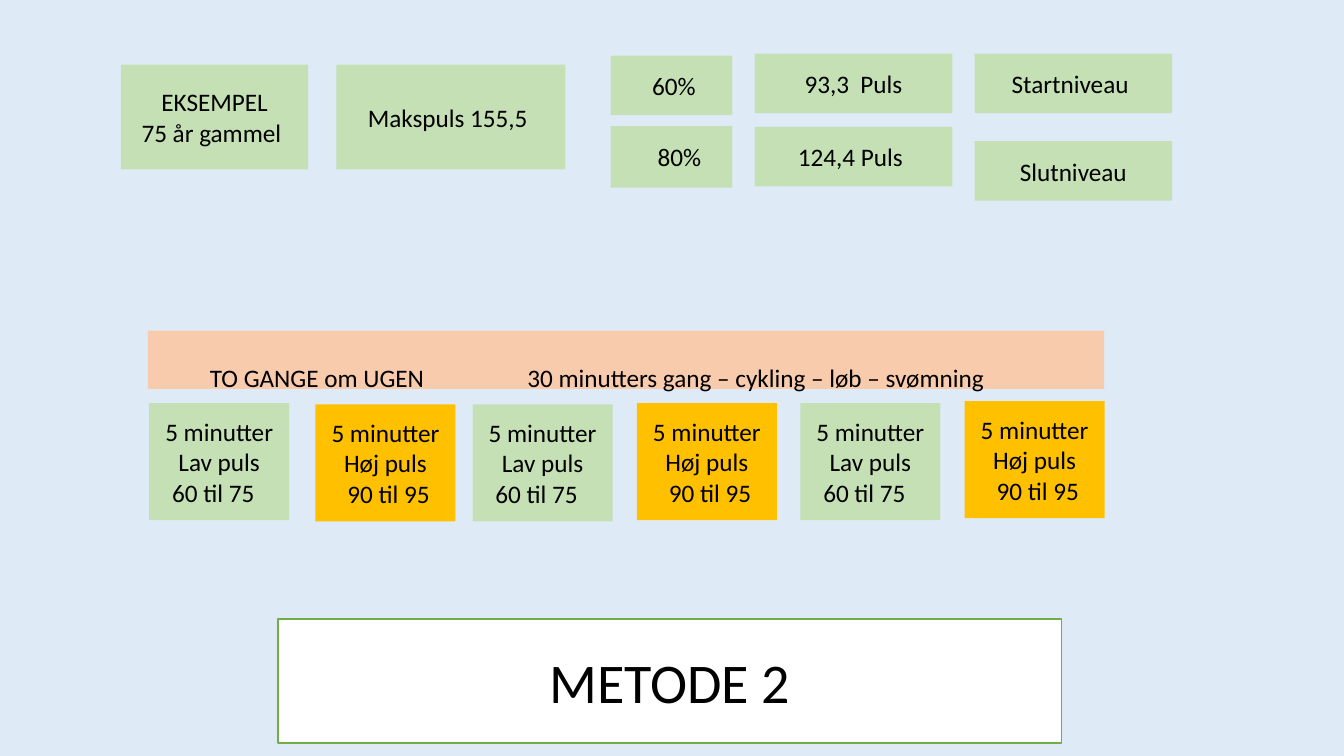
from dataclasses import dataclass

from lxml.etree import SubElement
from pptx import Presentation
from pptx.dml.color import RGBColor
from pptx.enum.shapes import MSO_SHAPE
from pptx.enum.text import MSO_ANCHOR, MSO_AUTO_SIZE, PP_ALIGN
from pptx.oxml.ns import qn
from pptx.shapes.autoshape import Shape
from pptx.slide import Slide
from pptx.text.text import TextFrame
from pptx.util import Cm, Pt

BACKGROUND = RGBColor(0xDE, 0xEB, 0xF7)
GREEN = RGBColor(0xC5, 0xE0, 0xB4)
GREEN_LINE = RGBColor(0x70, 0xAD, 0x47)
YELLOW = RGBColor(0xFF, 0xC0, 0x00)
PEACH = RGBColor(0xF8, 0xCB, 0xAD)
WHITE = RGBColor(0xFF, 0xFF, 0xFF)
BLACK = RGBColor(0x00, 0x00, 0x00)
FONT = "Calibri"


@dataclass(frozen=True)
class Line:
    """One line of text, moved sideways from the centre by shift (cm)."""
    text: str
    shift: float = 0


@dataclass(frozen=True)
class Box:
    """A filled rectangle, measured in cm."""
    left: float
    top: float
    width: float
    height: float
    lines: tuple[Line, ...]
    fill: RGBColor = GREEN


LOW_PULSE = (Line("5 minutter"), Line("Lav puls"), Line("60 til 75", -0.15))
HIGH_PULSE = (Line("5 minutter"), Line("Høj puls"), Line("90 til 95", 0.08))

EXAMPLE_BOXES = (
    Box(3.05, 1.63, 4.72, 2.64, (Line("EKSEMPEL"), Line("75 år gammel", -0.08))),
    Box(8.48, 1.63, 5.77, 2.64, (Line("Makspuls 155,5", -0.08),)),
    Box(15.39, 1.4, 3.07, 1.5, (Line("60%", 0.06),)),
    Box(15.39, 3.18, 3.07, 1.55, (Line("80%", 0.2),)),
    Box(19.02, 1.35, 4.98, 1.5, (Line("93,3  Puls"),)),
    Box(19.02, 3.2, 4.98, 1.5, (Line("124,4 Puls", -0.08),)),
    Box(24.56, 1.35, 4.98, 1.5, (Line("Startniveau", -0.08),)),
    Box(24.56, 3.56, 4.98, 1.5, (Line("Slutniveau"),)),
)

INTERVAL_CORNERS = (
    (3.76, 10.16), (7.95, 10.19), (11.91, 10.19),
    (16.05, 10.16), (20.17, 10.16), (24.31, 10.11),
)
INTERVAL_BOXES = tuple(
    Box(left, top, 3.53, 2.95,
        HIGH_PULSE if index % 2 else LOW_PULSE,
        YELLOW if index % 2 else GREEN)
    for index, (left, top) in enumerate(INTERVAL_CORNERS)
)

BANNER = Box(3.73, 8.33, 24.1, 1.47, (
    Line("TO GANGE om UGEN\t30 minutters gang – cykling – løb – svømning"),
), PEACH)
BANNER_TAB = 8.0
TITLE = Box(7.01, 15.6, 19.74, 3.12, (Line("METODE 2"),), WHITE)


def write_text(frame: TextFrame, lines: tuple[Line, ...], *, size: float = 18,
               align: PP_ALIGN = PP_ALIGN.CENTER,
               anchor: MSO_ANCHOR = MSO_ANCHOR.MIDDLE) -> None:
    frame.word_wrap = True
    frame.auto_size = MSO_AUTO_SIZE.NONE
    frame.vertical_anchor = anchor
    for index, line in enumerate(lines):
        para = frame.add_paragraph() if index else frame.paragraphs[0]
        para.alignment = align
        if line.shift:
            side = "marL" if line.shift > 0 else "marR"
            para._p.get_or_add_pPr().set(side, str(int(Cm(2 * abs(line.shift)))))
        span = para.add_run()
        span.text = line.text
        span.font.name = FONT
        span.font.size = Pt(size)
        span.font.color.rgb = BLACK


def draw_box(slide: Slide, box: Box) -> Shape:
    shape = slide.shapes.add_shape(
        MSO_SHAPE.RECTANGLE,
        Cm(box.left), Cm(box.top), Cm(box.width), Cm(box.height))
    shape.shadow.inherit = False
    shape.fill.solid()
    shape.fill.fore_color.rgb = box.fill
    shape.line.fill.background()
    return shape


def draw_banner(slide: Slide) -> None:
    frame = draw_box(slide, BANNER).text_frame
    frame.margin_left = Cm(1.56)
    frame.margin_top = Cm(0.79)
    frame.margin_bottom = 0
    write_text(frame, BANNER.lines, align=PP_ALIGN.LEFT, anchor=MSO_ANCHOR.TOP)
    properties = frame.paragraphs[0]._p.get_or_add_pPr()
    tabs = SubElement(properties, qn("a:tabLst"))
    SubElement(tabs, qn("a:tab"), pos=str(int(Cm(BANNER_TAB))), algn="l")


def place_title(slide: Slide) -> None:
    title = slide.shapes.title
    title.left, title.top = Cm(TITLE.left), Cm(TITLE.top)
    title.width, title.height = Cm(TITLE.width), Cm(TITLE.height)
    title.fill.solid()
    title.fill.fore_color.rgb = TITLE.fill
    title.line.color.rgb = GREEN_LINE
    title.line.width = Pt(1)
    write_text(title.text_frame, TITLE.lines, size=40)


def main() -> None:
    deck = Presentation()
    deck.slide_width, deck.slide_height = Cm(33.87), Cm(19.05)
    slide = deck.slides.add_slide(deck.slide_layouts.get_by_name("Title Only"))
    slide.background.fill.solid()
    slide.background.fill.fore_color.rgb = BACKGROUND
    draw_banner(slide)
    for box in EXAMPLE_BOXES + INTERVAL_BOXES:
        write_text(draw_box(slide, box).text_frame, box.lines)
    place_title(slide)
    deck.save("out.pptx")


if __name__ == "__main__":
    main()
